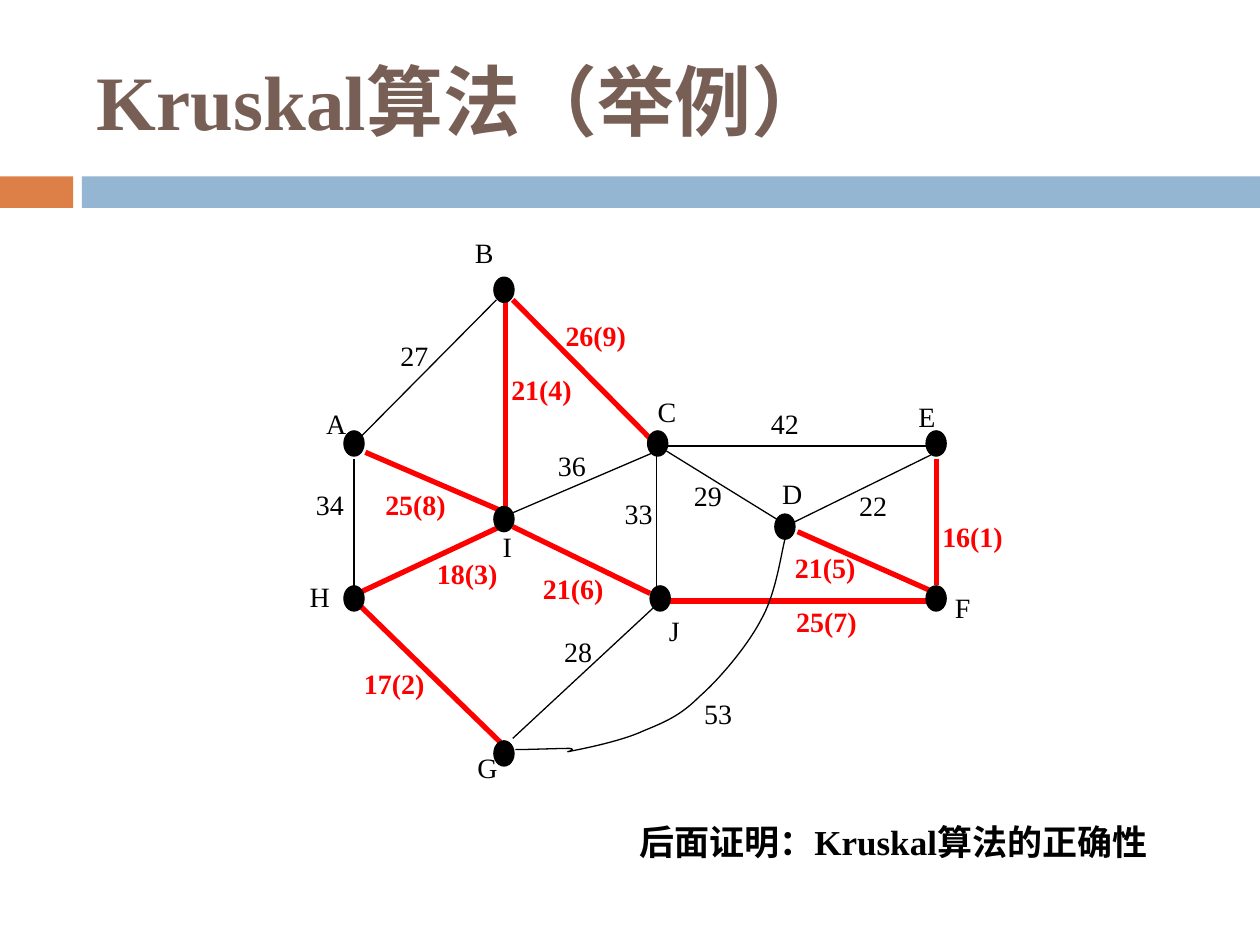
from lxml import etree
from pptx import Presentation
from pptx.dml.color import RGBColor
from pptx.enum import shapes, text
from pptx.oxml.ns import qn
from pptx.util import Inches, Pt

BLACK = RGBColor(0x00, 0x00, 0x00)
RED = RGBColor(0xFF, 0x00, 0x00)
BROWN = RGBColor(0x77, 0x5F, 0x55)
ORANGE = RGBColor(0xDD, 0x80, 0x47)
BLUE = RGBColor(0x94, 0xB6, 0xD2)
FONT = "Times New Roman"
NODE_W, NODE_H = 0.16, 0.2

TITLE = "Kruskal算法（举例）"
REMARK = "后面证明：Kruskal算法的正确性"
BANDS = [((0, 1.4, 0.58, 0.25), ORANGE), ((0.65, 1.4, 9.35, 0.25), BLUE)]

# name: (left and top of the dot, box of the label)
NODES = {
    "A": ((2.73, 3.42), (2.49, 3.18, 0.38, 0.45)),
    "B": ((3.92, 2.2), (3.67, 1.82, 0.69, 0.66)),
    "C": ((5.14, 3.42), (5.12, 3.08, 0.39, 0.39)),
    "D": ((6.15, 4.08), (6.11, 3.73, 0.44, 0.35)),
    "E": ((7.35, 3.42), (7.19, 3.12, 0.34, 0.35)),
    "F": ((7.35, 4.65), (7.48, 4.64, 0.32, 0.34)),
    "G": ((3.92, 5.88), (3.69, 5.91, 0.27, 0.39)),
    "H": ((2.73, 4.65), (2.36, 4.55, 0.36, 0.43)),
    "I": ((3.92, 4.02), (3.89, 4.15, 0.33, 0.4)),
    "J": ((5.16, 4.65), (5.21, 4.82, 0.33, 0.4)),
}

# weight, step at which Kruskal picks the edge (None: not picked),
# start, end, box of the label
EDGES = [
    (27, None, (2.85, 3.48), (3.94, 2.38), (3.08, 2.64, 0.45, 0.41)),
    (34, None, (2.81, 3.64), (2.81, 4.73), (2.41, 3.82, 0.43, 0.34)),
    (26, 9, (4.07, 2.38), (5.17, 3.49), (4.39, 2.48, 0.99, 0.36)),
    (17, 2, (2.86, 4.81), (3.97, 5.89), (2.79, 5.24, 0.89, 0.4)),
    (28, None, (4.07, 5.86), (5.19, 4.82), (4.38, 4.99, 0.43, 0.41)),
    (33, None, (5.21, 4.74), (5.21, 3.61), (4.86, 3.89, 0.47, 0.42)),
    (25, 8, (2.9, 3.59), (3.97, 4.05), (2.96, 3.82, 0.7, 0.38)),
    (18, 3, (2.86, 4.7), (3.97, 4.18), (3.37, 4.37, 0.76, 0.42)),
    (36, None, (4.07, 4.07), (5.19, 3.59), (4.33, 3.51, 0.46, 0.43)),
    (21, 6, (4.07, 4.18), (5.16, 4.71), (4.21, 4.49, 0.75, 0.4)),
    (21, 4, (4.01, 2.4), (4.01, 4.05), (3.96, 2.91, 1.13, 0.43)),
    (42, None, (5.29, 3.54), (7.35, 3.54), (6.02, 3.18, 0.52, 0.46)),
    (25, 7, (5.31, 4.77), (7.37, 4.77), (6.22, 4.75, 0.74, 0.46)),
    (16, 1, (7.43, 4.64), (7.43, 3.64), (7.38, 4.07, 0.82, 0.38)),
    (29, None, (5.29, 3.58), (6.18, 4.13), (5.41, 3.75, 0.84, 0.73)),
    (22, None, (6.29, 4.15), (7.39, 3.61), (6.72, 3.83, 0.43, 0.41)),
    (21, 5, (6.33, 4.22), (7.39, 4.69), (6.21, 4.32, 0.75, 0.33)),
]

# The bent edge D-G: a start, then three points for each Bezier piece
DG_WEIGHT, DG_LABEL = 53, (5.49, 5.48, 0.5, 0.45)
DG_CURVE = [
    (6.23, 4.28),
    (6.2, 4.39), (6.16, 4.71), (6.04, 4.92),
    (5.93, 5.13), (5.71, 5.39), (5.55, 5.53),
    (5.4, 5.68), (5.28, 5.73), (5.11, 5.8),
    (4.94, 5.88), (4.64, 5.94), (4.54, 5.96),
    (4.44, 5.98), (4.6, 5.95), (4.52, 5.94),
    (4.45, 5.94), (4.18, 5.95), (4.09, 5.95),
]


def inches(values):
    return [Inches(v) for v in values]


def write(shape, words, size, color, bold=False, align=None, wrap=True):
    shape.text_frame.word_wrap = wrap
    paragraph = shape.text_frame.paragraphs[0]
    paragraph.text = words
    paragraph.alignment = align
    font = paragraph.font
    font.name, font.size, font.bold = FONT, Pt(size), bold
    font.color.rgb = color


def add_label(slide, words, box, color=BLACK, bold=False):
    label = slide.shapes.add_textbox(*inches(box))
    write(label, str(words), 16, color, bold, text.PP_ALIGN.JUSTIFY)


def add_filled(slide, kind, box, color):
    shape = slide.shapes.add_shape(kind, *inches(box))
    shape.shadow.inherit = False
    shape.fill.solid()
    shape.fill.fore_color.rgb = color
    shape.line.fill.background()
    return shape


def add_edge(slide, weight, step, start, end, label_box):
    color = RED if step else BLACK
    edge = slide.shapes.add_connector(
        shapes.MSO_CONNECTOR.STRAIGHT, *inches(start + end))
    edge.line.color.rgb = color
    edge.line.width = Pt(3 if step else 0.75)
    etree.SubElement(edge._element.spPr, qn("a:effectLst"))
    words = f"{weight}({step})" if step else weight
    add_label(slide, words, label_box, color, bold=bool(step))


def add_curve(slide, points):
    """Draw a polyline through all points, then turn each three into a Bezier."""
    start, *rest = [inches(p) for p in points]
    builder = slide.shapes.build_freeform(*start)
    builder.add_line_segments(rest, close=False)
    curve = builder.convert_to_shape()
    curve.shadow.inherit = False
    curve.fill.background()
    curve.line.color.rgb = BLACK
    curve.line.width = Pt(0.75)
    outline = curve._element.find(".//" + qn("a:path"))
    segments = outline.findall(qn("a:lnTo"))
    for i in range(0, len(segments), 3):
        bezier = etree.SubElement(outline, qn("a:cubicBezTo"))
        for segment in segments[i:i + 3]:
            bezier.append(segment[0])
            outline.remove(segment)


def main():
    deck = Presentation()
    deck.slide_width, deck.slide_height = Inches(10), Inches(7.5)
    slide = deck.slides.add_slide(deck.slide_layouts[6])

    for box, color in BANDS:
        add_filled(slide, shapes.MSO_SHAPE.RECTANGLE, box, color)

    title = slide.shapes.add_textbox(*inches((0.67, 0.25, 8.92, 1.08)))
    write(title, TITLE, 44, BROWN, bold=True)
    title.text_frame.vertical_anchor = text.MSO_ANCHOR.MIDDLE

    for edge in EDGES:
        add_edge(slide, *edge)
    add_curve(slide, DG_CURVE)
    add_label(slide, DG_WEIGHT, DG_LABEL)

    for name, (corner, label_box) in NODES.items():
        dot = add_filled(slide, shapes.MSO_SHAPE.OVAL,
                         corner + (NODE_W, NODE_H), BLACK)
        dot.line.color.rgb = BLACK
        dot.line.width = Pt(0.75)
        add_label(slide, name, label_box)

    remark = slide.shapes.add_shape(
        shapes.MSO_SHAPE.ROUNDED_RECTANGULAR_CALLOUT,
        *inches((4.45, 6.43, 5.28, 0.71)))
    remark.adjustments[0], remark.adjustments[1] = -0.21, 0.63
    remark.shadow.inherit = False
    remark.fill.background()
    remark.line.fill.background()
    write(remark, REMARK, 20, BLACK, bold=True,
          align=text.PP_ALIGN.CENTER, wrap=False)
    remark.text_frame.vertical_anchor = text.MSO_ANCHOR.TOP

    deck.save("out.pptx")


if __name__ == "__main__":
    main()
